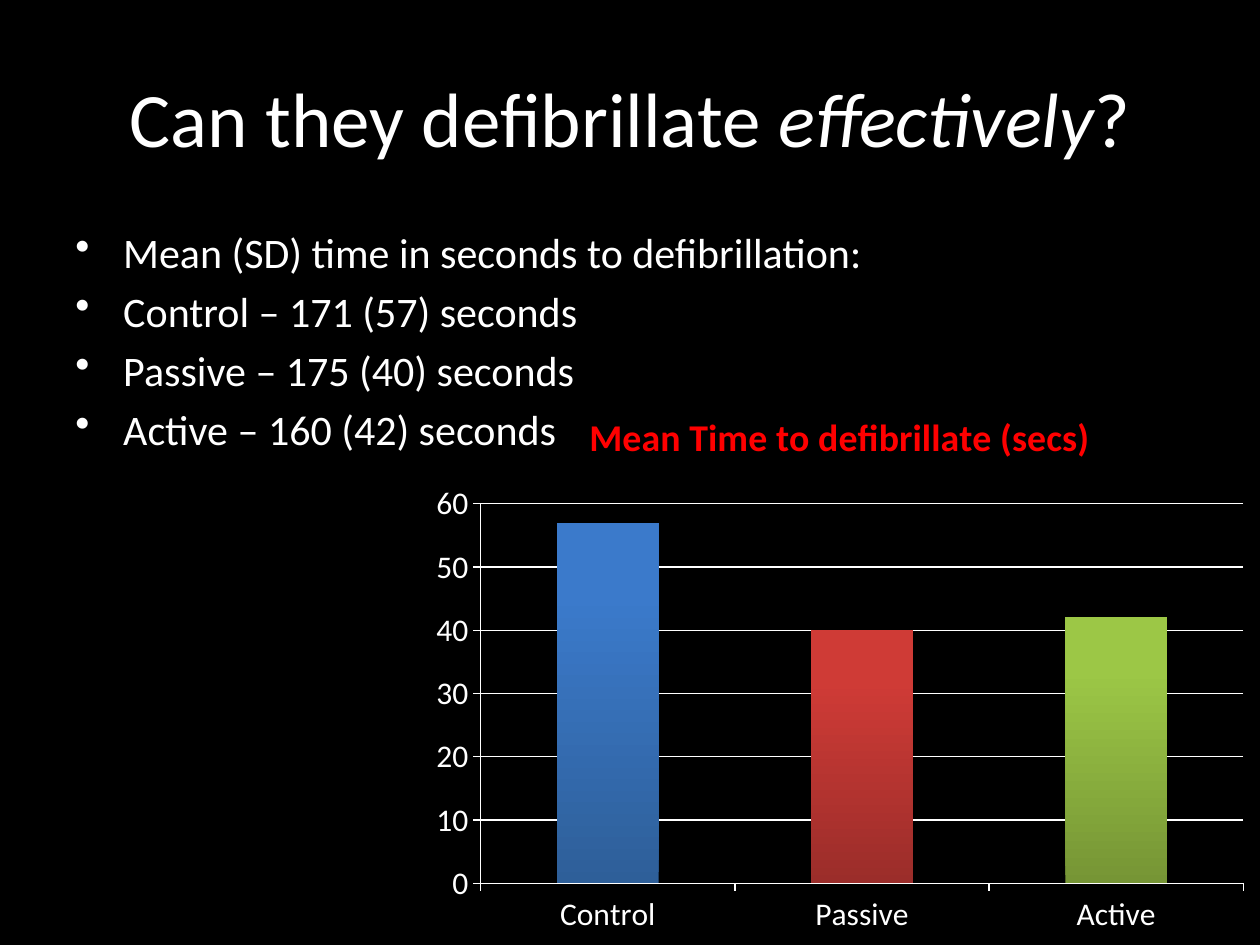
from lxml import etree
from pptx import Presentation
from pptx.chart.data import CategoryChartData
from pptx.dml.color import RGBColor
from pptx.enum.chart import XL_CHART_TYPE, XL_TICK_MARK
from pptx.enum.text import MSO_ANCHOR, PP_ALIGN
from pptx.oxml.ns import qn
from pptx.util import Inches, Pt

COLUMN = XL_CHART_TYPE.COLUMN_CLUSTERED
TICK_OUTSIDE = XL_TICK_MARK.OUTSIDE
MIDDLE = MSO_ANCHOR.MIDDLE
CENTER = PP_ALIGN.CENTER

FONT = "Calibri"
BLACK = RGBColor(0x00, 0x00, 0x00)
WHITE = RGBColor(0xFF, 0xFF, 0xFF)
RED = RGBColor(0xFF, 0x00, 0x00)
# Bottom and top colour of each column
COLUMN_GRADIENTS = [
    (RGBColor(0x2E, 0x5F, 0x99), RGBColor(0x3B, 0x7A, 0xCB)),
    (RGBColor(0x9B, 0x2D, 0x2A), RGBColor(0xCF, 0x3B, 0x36)),
    (RGBColor(0x76, 0x95, 0x35), RGBColor(0x9C, 0xC7, 0x46)),
]


def style_font(font, size, color=WHITE):
    font.name = FONT
    font.size = Pt(size)
    font.color.rgb = color


presentation = Presentation()
presentation.slide_width = Inches(10)
presentation.slide_height = Inches(7.5)
slide = presentation.slides.add_slide(presentation.slide_layouts[6])
slide.background.fill.solid()
slide.background.fill.fore_color.rgb = BLACK

# Title
title_box = slide.shapes.add_textbox(Inches(0.5), Inches(0.3), Inches(9), Inches(1.25))
title_box.text_frame.word_wrap = True
title_box.text_frame.vertical_anchor = MIDDLE
paragraph = title_box.text_frame.paragraphs[0]
paragraph.alignment = CENTER
style_font(paragraph.font, 44)
for text, italic in [("Can they defibrillate ", False), ("effectively", True), ("?", False)]:
    run = paragraph.add_run()
    run.text = text
    run.font.italic = italic

# Bulleted results
body_box = slide.shapes.add_textbox(Inches(0.5), Inches(1.75), Inches(9), Inches(3.25))
body_box.text_frame.word_wrap = True
body_box.text_frame.text = "\n".join([
    "Mean (SD) time in seconds to defibrillation:",
    "Control – 171 (57) seconds",
    "Passive – 175 (40) seconds",
    "Active – 160 (42) seconds",
])
for paragraph in body_box.text_frame.paragraphs:
    style_font(paragraph.font, 24)
    paragraph.space_before = Pt(4.8)
    properties = paragraph._p.get_or_add_pPr()
    properties.set("marL", str(Inches(0.38)))
    properties.set("indent", str(-Inches(0.38)))
    bullet = etree.Element(qn("a:buChar"), char="•")
    properties.find(qn("a:spcBef")).addnext(bullet)

# Column chart
chart_data = CategoryChartData()
chart_data.categories = ["Control", "Passive", "Active"]
chart_data.add_series("Series 1", [57, 40, 42])
chart = slide.shapes.add_chart(
    COLUMN, Inches(3.33), Inches(3.06), Inches(6.67), Inches(4.44), chart_data
).chart
style_font(chart.font, 18)
chart.has_legend = False
chart.has_title = True
chart_title = chart.chart_title.text_frame
chart_title.text = "Mean Time to defibrillate (secs)"
style_font(chart_title.paragraphs[0].font, 21.6, RED)
chart_title.paragraphs[0].font.bold = True

# Axes
for axis in (chart.category_axis, chart.value_axis):
    axis.major_tick_mark = TICK_OUTSIDE
    axis.format.line.color.rgb = WHITE
    axis.format.line.width = Pt(0.75)
value_axis = chart.value_axis
value_axis.minimum_scale = 0
value_axis.maximum_scale = 60
value_axis.major_unit = 10
value_axis.has_major_gridlines = True
value_axis.major_gridlines.format.line.color.rgb = WHITE
value_axis.major_gridlines.format.line.width = Pt(0.75)

# Columns with vertical gradients
plot = chart.plots[0]
plot.gap_width = 150
plot.vary_by_categories = True
for index, colors in enumerate(COLUMN_GRADIENTS):
    fill = plot.series[0].points[index].format.fill
    fill.gradient()
    fill.gradient_angle = 90
    for stop, color, position in zip(fill.gradient_stops, colors, (0, 0.8)):
        stop.color.rgb = color
        stop.position = position

presentation.save("out.pptx")
